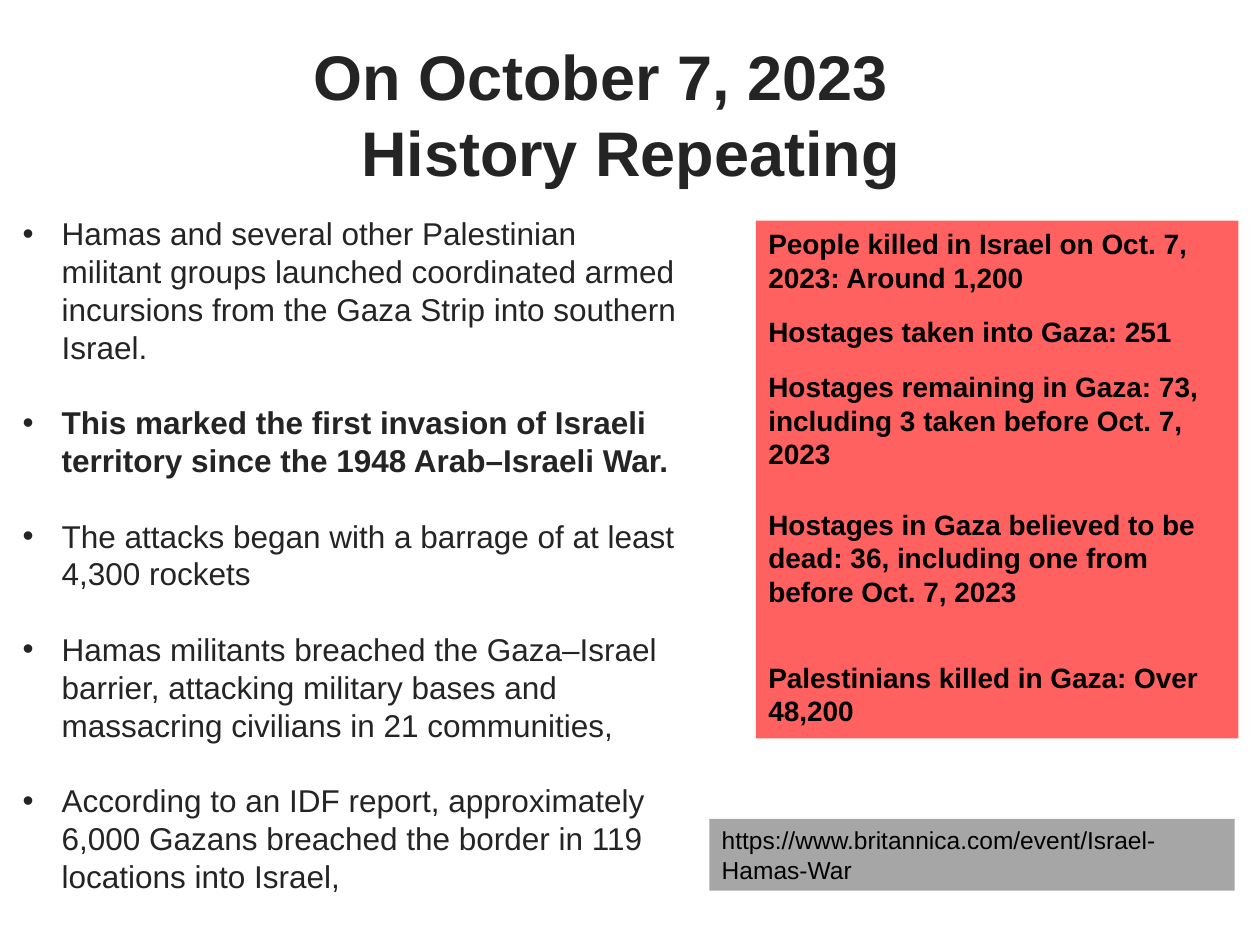
from pptx import Presentation, util as u
from pptx.dml.color import RGBColor
from pptx.enum import shapes, text
from pptx.oxml.ns import qn
from lxml import etree

HUES = {"ink": "242424", "black": "000000", "red": "FF6161", "gray": "A6A6A6"}
FONT = "Arial"
LEAD = 1.2  # line pitch as a multiple of the text size

TITLE = ["On October 7, 2023", "History Repeating"]
# (text, bold)
POINTS = [
    ("Hamas and several other Palestinian militant groups launched coordinated "
     "armed incursions from the Gaza Strip into southern Israel.", False),
    ("This marked the first invasion of Israeli territory since the 1948 "
     "Arab–Israeli War.", True),
    ("The attacks began with a barrage of at least 4,300 rockets", False),
    ("Hamas militants breached the Gaza–Israel barrier, attacking military "
     "bases and massacring civilians in 21 communities,", False),
    ("According to an IDF report, approximately 6,000 Gazans breached the "
     "border in 119 locations into Israel,", False),
]
# (text, space before and after in points)
TOLLS = [
    ("People killed in Israel on Oct. 7, 2023: Around 1,200", 6),
    ("Hostages taken into Gaza: 251", 6),
    ("Hostages remaining in Gaza: 73, including 3 taken before Oct. 7, 2023", 6),
    ("Hostages in Gaza believed to be dead: 36, including one from before "
     "Oct. 7, 2023", 15),
    ("Palestinians killed in Gaza: Over 48,200", 15),
]
LINK = "https://www.britannica.com/event/Israel-Hamas-War"


def place(shape, box):
    shape.left, shape.top, shape.width, shape.height = map(u.Inches, box)


def setup(frame):
    frame.word_wrap = True
    frame.auto_size = text.MSO_AUTO_SIZE.NONE
    frame.vertical_anchor = text.MSO_ANCHOR.TOP


def add_para(frame, first, words, size, hue, bold=False,
             align=text.PP_ALIGN.LEFT, before=0, after=0):
    para = frame.paragraphs[0] if first else frame.add_paragraph()
    para.alignment = align
    para.line_spacing = u.Pt(size * LEAD)
    para.space_before = u.Pt(0 if first else before)
    para.space_after = u.Pt(after)
    run = para.add_run()
    run.text = words
    font = run.font
    font.name, font.size, font.bold = FONT, u.Pt(size), bold
    font.color.rgb = RGBColor.from_string(HUES[hue])
    return para


def add_bullet(para, indent):
    props = para._p.get_or_add_pPr()
    props.set("marL", str(u.Inches(indent)))
    props.set("indent", str(-u.Inches(indent)))
    face = etree.SubElement(props, qn("a:buFont"))
    face.set("typeface", FONT)
    mark = etree.SubElement(props, qn("a:buChar"))
    mark.set("char", "•")


def add_title(slide, box):
    shape = slide.shapes.title
    place(shape, box)
    frame = shape.text_frame
    setup(frame)
    sides = [text.PP_ALIGN.LEFT, text.PP_ALIGN.CENTER]
    for i, (line, side) in enumerate(zip(TITLE, sides)):
        add_para(frame, i == 0, line, 36, "ink", True, side)


def add_points(slide, box):
    shape = slide.placeholders[1]
    place(shape, box)
    frame = shape.text_frame
    setup(frame)
    frame.margin_left = frame.margin_right = u.Inches(0.01)
    frame.margin_top = u.Inches(0.08)
    size = 18
    for i, (words, bold) in enumerate(POINTS):
        para = add_para(frame, i == 0, words, size, "ink", bold,
                        before=size * LEAD)
        add_bullet(para, 0.31)


def add_panel(slide, box, hue):
    shape = slide.shapes.add_shape(shapes.MSO_SHAPE.RECTANGLE,
                                   *map(u.Inches, box))
    shape.shadow.inherit = False
    shape.fill.solid()
    shape.fill.fore_color.rgb = RGBColor.from_string(HUES[hue])
    shape.line.fill.background()
    setup(shape.text_frame)
    return shape.text_frame


def add_tolls(slide, box):
    frame = add_panel(slide, box, "red")
    for i, (words, gap) in enumerate(TOLLS):
        add_para(frame, i == 0, words, 16, "black", True,
                 before=gap, after=gap)


def add_link(slide, box):
    add_para(add_panel(slide, box, "gray"), True, LINK, 14, "black")


def main():
    deck = Presentation()
    deck.slide_width, deck.slide_height = u.Inches(10), u.Inches(7.5)
    slide = deck.slides.add_slide(deck.slide_layouts[1])

    # Heading and bullet list
    add_title(slide, (2.39, 0.25, 5.23, 1.31))
    add_points(slide, (0.17, 1.62, 5.23, 5.86))

    # Source link and casualty panel
    add_link(slide, (5.63, 6.5, 4.17, 0.57))
    add_tolls(slide, (6, 1.75, 3.83, 4.11))

    deck.save("out.pptx")


if __name__ == "__main__":
    main()
